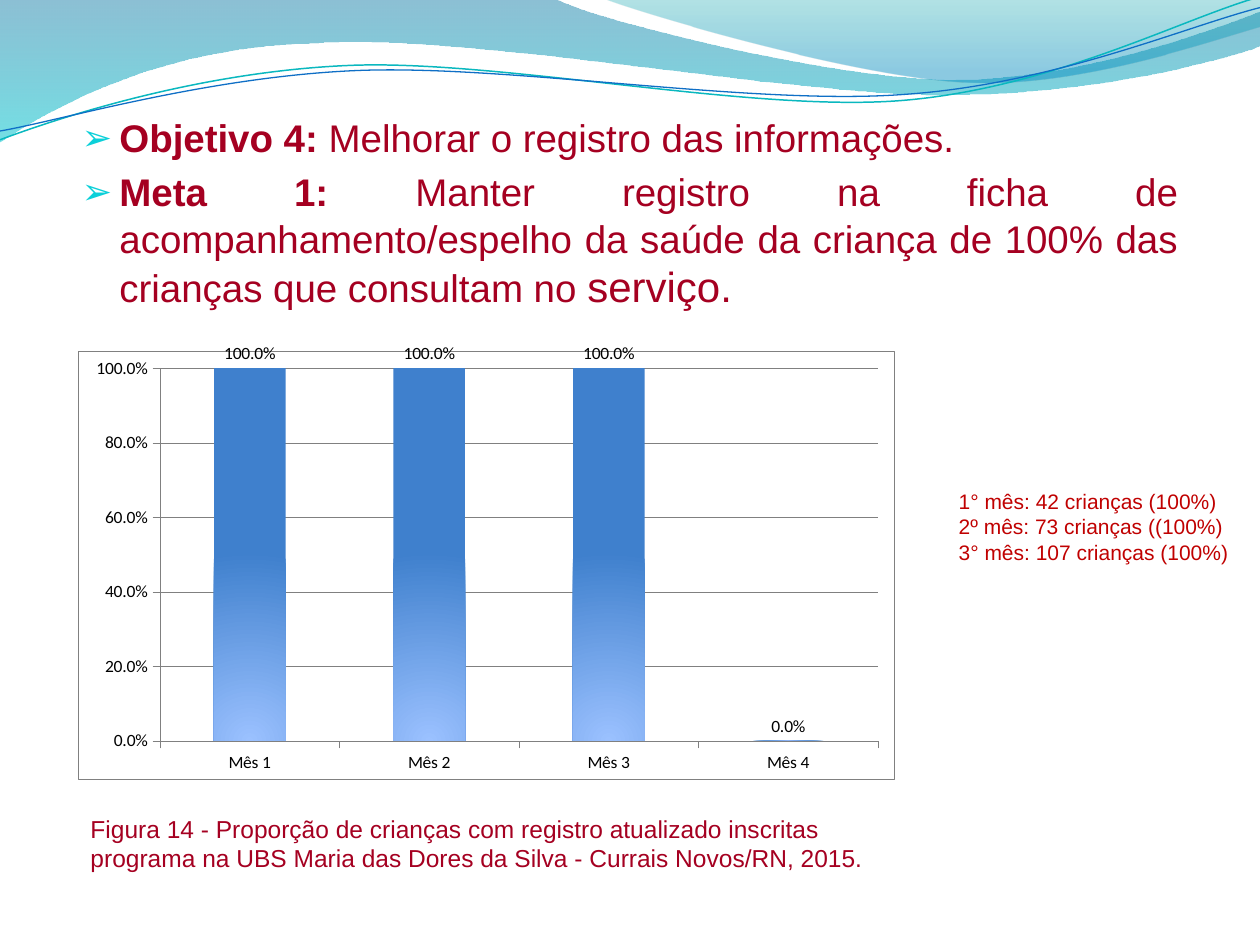
from dataclasses import dataclass
from math import cos, radians, sin
from typing import NamedTuple, Optional

from lxml.etree import SubElement
from pptx import Presentation
from pptx.chart.data import CategoryChartData
from pptx.dml.color import RGBColor
from pptx.enum.chart import XL_CHART_TYPE, XL_LABEL_POSITION, XL_TICK_MARK
from pptx.enum.text import PP_ALIGN
from pptx.oxml import parse_xml
from pptx.oxml.ns import nsdecls, qn
from pptx.util import Inches, Pt


@dataclass(frozen=True)
class Theme:
    font: str = "Arial"
    chart_font: str = "Calibri"
    wine: str = "A50021"
    red: str = "C00000"
    bullet: str = "0BD0D9"
    black: str = "000000"
    white: str = "FFFFFF"
    gray: str = "808080"
    bar_light: str = "9BC1FF"
    bar_dark: str = "3F80CD"
    body: int = 22
    body_large: int = 24
    caption: int = 14
    note: int = 12
    chart: int = 10
    hairline: float = 0.25


T = Theme()


class Stop(NamedTuple):
    position: float
    color: str
    alpha: int = 100


@dataclass(frozen=True)
class Wave:
    """Pairs in steps are straight segments, sextets are cubic curves."""
    box: tuple
    start: tuple
    steps: list
    stops: tuple = ()
    line: Optional[str] = None
    width: float = 0
    rotation: float = 0


class Run(NamedTuple):
    text: str
    bold: bool = False
    size: Optional[int] = None


WAVES = [
    Wave((-0.01, -0.01, 10.02, 1.14), (0, 0),
         [(4.4, -0.01), (4.76, 0.17, 6.64, 0.63, 7.58, 0.63),
          (8.53, 0.63, 9.58, 0.26, 10, 0.09), (10.01, 0.36),
          (9.83, 0.44, 8.7, 0.76, 7.46, 0.75),
          (6.22, 0.75, 3.82, 0.28, 2.57, 0.34),
          (1.29, 0.36, 0.46, 0.83, -0.01, 1.13), (0, 0)],
         stops=(Stop(0, "0074A1", 45), Stop(1, "00C6CF", 55))),
    Wave((4.79, -0.01, 5.21, 0.7), (4.79, -0.01),
         [(5.09, 0.11, 6.82, 0.62, 7.69, 0.65),
          (8.56, 0.69, 9.61, 0.32, 10, 0.21), (10, 0), (4.79, -0.01)],
         stops=(Stop(0, "00A1A9", 30), Stop(0.8, "008BBF", 45))),
    Wave((-0.02, 0.22, 10.02, 0.71), (0, 1.11),
         [(0.48, 0.93, 1.58, 0.57, 2.77, 0.52),
          (3.95, 0.47, 5.93, 0.89, 7.13, 0.8),
          (8.33, 0.71, 9.38, 0.15, 9.98, -0.02)],
         line="0AB8BF", width=0.85, rotation=357.3),
    Wave((-0.02, 0.3, 10.03, 0.58), (0, 1.04),
         [(0.47, 0.96, 1.64, 0.61, 2.83, 0.56),
          (4.03, 0.51, 5.97, 0.84, 7.17, 0.75),
          (8.36, 0.67, 9.41, 0.21, 10, 0.06)],
         line="0F6FC6", width=0.75, rotation=357.3),
]


def rgb(color: str) -> RGBColor:
    return RGBColor.from_string(color)


def to_local(wave: Wave, x: float, y: float) -> tuple:
    """Map a point on the slide into the wave's box before its rotation."""
    left, top, width, height = wave.box
    dx, dy = x - left - width / 2, y - top - height / 2
    a = radians(-wave.rotation)
    return (Inches(dx * cos(a) - dy * sin(a) + width / 2),
            Inches(dx * sin(a) + dy * cos(a) + height / 2))


def set_gradient(fill, stops: tuple) -> None:
    """Fill from top to bottom."""
    fill.gradient()
    fill.gradient_angle = 270
    for target, stop in zip(fill.gradient_stops, stops):
        target.position = stop.position
        target.color.rgb = rgb(stop.color)
    for node, stop in zip(fill._fill._gradFill.iter(qn("a:srgbClr")), stops):
        if stop.alpha < 100:
            SubElement(node, qn("a:alpha"), val=str(stop.alpha * 1000))


def glow_from_base(fill) -> None:
    """Replace the linear direction by a circle centred on the bottom edge."""
    grad = fill._fill._gradFill
    grad.replace(grad.find(qn("a:lin")), parse_xml(
        f'<a:path {nsdecls("a")} path="circle">'
        '<a:fillToRect l="50000" t="100000" r="50000"/></a:path>'))


def add_wave(s, wave: Wave) -> None:
    builder = s.shapes.build_freeform(*map(Inches, wave.start), scale=1.0)
    builder.add_line_segments([tuple(map(Inches, step[-2:])) for step in wave.steps],
                              close=bool(wave.stops))
    sp = builder.convert_to_shape()
    sp.left, sp.top, sp.width, sp.height = map(Inches, wave.box)
    sp.rotation = wave.rotation
    outline = sp._element.find(".//" + qn("a:pathLst"))[0]
    outline.set("w", str(sp.width))
    outline.set("h", str(sp.height))
    for node, step in zip(outline, [wave.start, *wave.steps]):
        for pt in list(node):
            node.remove(pt)
        if len(step) == 6:
            curve = SubElement(outline, qn("a:cubicBezTo"))
            outline.replace(node, curve)
            node = curve
        for x, y in zip(step[::2], step[1::2]):
            px, py = to_local(wave, x, y)
            SubElement(node, qn("a:pt"), x=str(px), y=str(py))
    sp.shadow.inherit = False
    if wave.stops:
        set_gradient(sp.fill, wave.stops)
        sp.line.fill.background()
    else:
        sp.fill.background()
        sp.line.color.rgb = rgb(wave.line)
        sp.line.width = Pt(wave.width)


def add_text(s, box: tuple, paragraphs: list, *, size: int, color: str,
             align=PP_ALIGN.LEFT, margin: float = 0, indent: float = 0,
             before: float = 0, bullet: str = "") -> None:
    tf = s.shapes.add_textbox(*map(Inches, box)).text_frame
    tf.word_wrap = True
    for i, runs in enumerate(paragraphs):
        p = tf.paragraphs[0] if i == 0 else tf.add_paragraph()
        p.alignment = align
        p.space_before = Pt(before)
        pPr = p._p.get_or_add_pPr()
        pPr.set("marL", str(Inches(margin)))
        pPr.set("indent", str(Inches(indent)))
        if bullet:
            bu_color = SubElement(pPr, qn("a:buClr"))
            SubElement(bu_color, qn("a:srgbClr"), val=T.bullet)
            SubElement(pPr, qn("a:buSzPct"), val="95000")
            SubElement(pPr, qn("a:buFont"), typeface=T.font)
            SubElement(pPr, qn("a:buChar"), char=bullet)
        for run in runs:
            r = p.add_run()
            r.text = run.text
            r.font.name = T.font
            r.font.size = Pt(run.size or size)
            r.font.bold = run.bold
            r.font.color.rgb = rgb(color)


def hairline(line) -> None:
    line.color.rgb = rgb(T.gray)
    line.width = Pt(T.hairline)


def frame_chart(chart) -> None:
    """Give the chart area its fill and border, and fix the plot's place."""
    chart._chartSpace.find(qn("c:chart")).addnext(parse_xml(
        f'<c:spPr {nsdecls("c", "a")}>'
        f'<a:solidFill><a:srgbClr val="{T.white}"/></a:solidFill>'
        f'<a:ln w="{Pt(T.hairline)}"><a:solidFill><a:srgbClr val="{T.gray}"/>'
        '</a:solidFill></a:ln></c:spPr>'))
    plot_area = chart._chartSpace.find(".//" + qn("c:plotArea"))
    for old in plot_area.findall(qn("c:layout")):
        plot_area.remove(old)
    place = "".join(f'<c:{k} val="{v}"/>' for k, v in (
        ("layoutTarget", "inner"), ("xMode", "edge"), ("yMode", "edge"),
        ("x", 0.1), ("y", 0.04), ("w", 0.88), ("h", 0.87)))
    plot_area.insert(0, parse_xml(
        f'<c:layout {nsdecls("c")}><c:manualLayout>{place}</c:manualLayout></c:layout>'))


def add_monthly_chart(s, box: tuple) -> None:
    data = CategoryChartData(number_format="0.0%")
    data.categories = [f"Mês {month}" for month in range(1, 5)]
    data.add_series("Series 1", (1, 1, 1, 0))
    chart = s.shapes.add_chart(XL_CHART_TYPE.COLUMN_CLUSTERED, *map(Inches, box), data).chart
    chart.has_legend = chart.has_title = False
    chart.font.name, chart.font.size = T.chart_font, Pt(T.chart)
    chart.font.color.rgb = rgb(T.black)
    for axis in (chart.category_axis, chart.value_axis):
        axis.major_tick_mark = XL_TICK_MARK.OUTSIDE
        hairline(axis.format.line)
    values = chart.value_axis
    values.minimum_scale, values.maximum_scale, values.major_unit = 0, 1, 0.2
    hairline(values.major_gridlines.format.line)
    plot = chart.plots[0]
    plot.gap_width, plot.vary_by_categories = 150, False
    bars = plot.series[0].format.fill
    set_gradient(bars, (Stop(0, T.bar_light), Stop(1, T.bar_dark)))
    glow_from_base(bars)
    plot.has_data_labels = True
    labels = plot.data_labels
    labels.show_value = True
    labels.position = XL_LABEL_POSITION.OUTSIDE_END
    for numbered in (values.tick_labels, labels):
        numbered.number_format, numbered.number_format_is_linked = "0.0%", False
    frame_chart(chart)


def main() -> None:
    prs = Presentation()
    prs.slide_width, prs.slide_height = Inches(10), Inches(7.5)
    s = prs.slides.add_slide(prs.slide_layouts[6])
    for wave in WAVES:
        add_wave(s, wave)
    notes = ("1° mês: 42 crianças (100%)", "2º mês: 73 crianças ((100%)",
             "3° mês: 107 crianças (100%)")
    add_text(s, (7.42, 3.83, 2.58, 0.71), [[Run(note)] for note in notes],
             size=T.note, color=T.red, align=PP_ALIGN.JUSTIFY, margin=0.09)
    add_monthly_chart(s, (0.62, 2.73, 6.48, 3.46))
    goals = [
        [Run("Objetivo 4: ", bold=True), Run("Melhorar o registro das informações.")],
        [Run("Meta 1: ", bold=True),
         Run("Manter registro na ficha de acompanhamento/espelho da saúde da criança "
             "de 100% das crianças que consultam no "),
         Run("serviço.", size=T.body_large)],
    ]
    add_text(s, (0.55, 0.86, 8.9, 0.6), goals, size=T.body, color=T.wine,
             align=PP_ALIGN.JUSTIFY, margin=0.3, indent=-0.3, before=4.4, bullet="➢")
    add_text(s, (0.62, 6.41, 6.84, 0.57),
             [[Run("Figura 14 - Proporção de crianças com registro atualizado inscritas "
                   "programa na UBS Maria das Dores da Silva - Currais Novos/RN, 2015.")]],
             size=T.caption, color=T.wine)
    prs.save("out.pptx")


if __name__ == "__main__":
    main()
